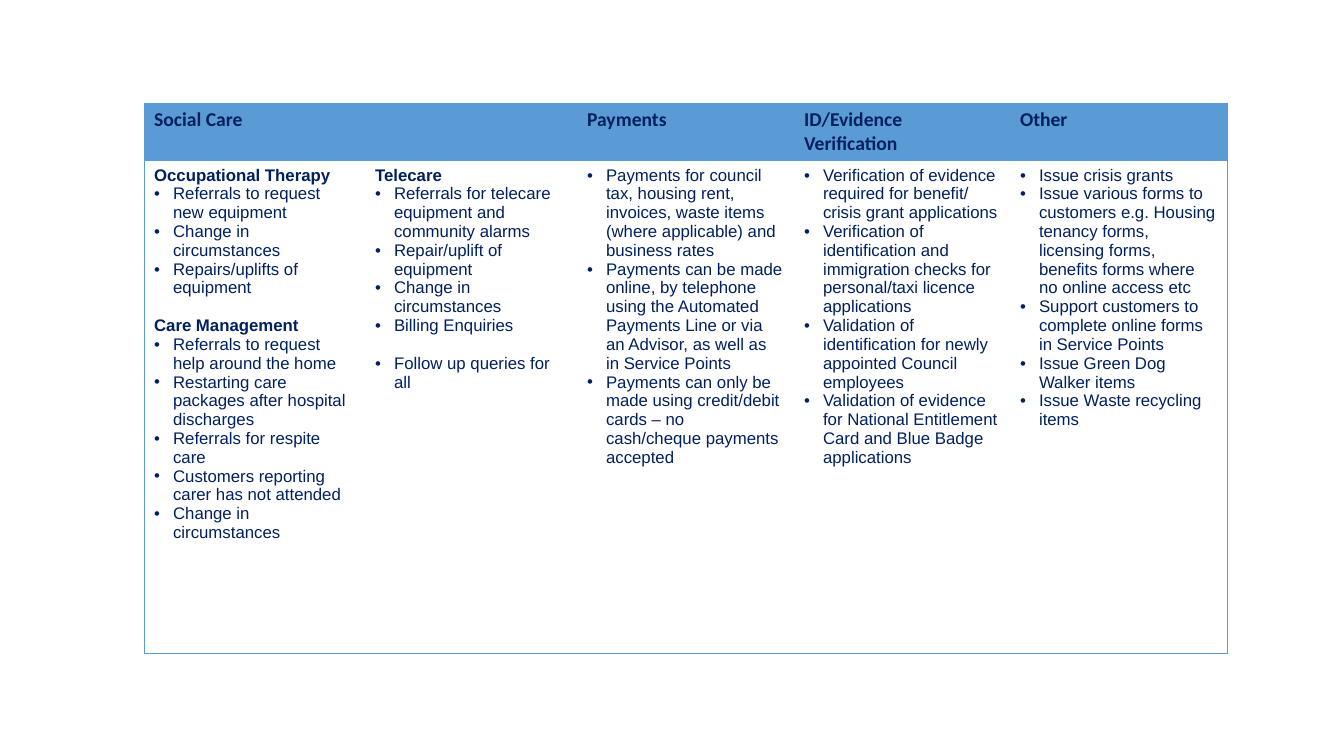
from lxml.etree import SubElement
from pptx import Presentation
from pptx.dml.color import RGBColor
from pptx.oxml.ns import qn
from pptx.util import Pt

HEADERS = ["Social Care", "", "Payments", "ID/Evidence Verification", "Other"]
SERVICES = [
    [
        ("Occupational Therapy", [
            "Referrals to request new equipment",
            "Change in circumstances",
            "Repairs/uplifts of equipment",
        ]),
        ("Care Management", [
            "Referrals to request help around the home",
            "Restarting care packages after hospital discharges",
            "Referrals for respite care",
            "Customers reporting carer has not attended",
            "Change in circumstances",
        ]),
    ],
    [
        ("Telecare", [
            "Referrals for telecare equipment and community alarms",
            "Repair/uplift of equipment",
            "Change in circumstances",
            "Billing Enquiries",
        ]),
        ("", ["Follow up queries for all"]),
    ],
    [("", [
        "Payments for council tax, housing rent, invoices, waste items (where applicable) and business rates",
        "Payments can be made online, by telephone using the Automated Payments Line or via an Advisor, as well as in Service Points",
        "Payments can only be made using credit/debit cards – no cash/cheque payments accepted",
    ])],
    [("", [
        "Verification of evidence required for benefit/ crisis grant applications",
        "Verification of identification and immigration checks for personal/taxi licence applications",
        "Validation of identification for newly appointed Council employees",
        "Validation of evidence for National Entitlement Card and Blue Badge applications",
    ])],
    [("", [
        "Issue crisis grants",
        "Issue various forms to customers e.g. Housing tenancy forms, licensing forms, benefits forms where no online access etc",
        "Support customers to complete online forms in Service Points",
        "Issue Green Dog Walker items",
        "Issue Waste recycling items",
    ])],
]
NAVY, BLUE, WHITE = "002060", "5B9BD5", "FFFFFF"
NO_GRID_STYLE = "{2D5ABB26-0587-4C30-8999-92F81FD0307C}"
LEFT, TOP = 144, 103
COLUMN_WIDTHS = [221, 212, 217, 216, 217]
ROW_HEIGHTS = [50, 493]
BULLET_INDENT = 19
GROUP_GAP = 13.4


def px(length):
    return round(length * 914400 / 100.8)


def color(value):
    return RGBColor.from_string(value)


def write(paragraph, text, size=12, font="Arial", bold=False, bullet=False, gap=0):
    run = paragraph.add_run()
    run.text = text
    run.font.size = Pt(size)
    run.font.name = font
    run.font.bold = bold
    run.font.color.rgb = color(NAVY)
    paragraph.space_before = Pt(gap)
    if bullet:
        properties = paragraph._p.get_or_add_pPr()
        properties.set("marL", str(px(BULLET_INDENT)))
        properties.set("indent", str(-px(BULLET_INDENT)))
        SubElement(properties, qn("a:buFont"), typeface="Arial")
        SubElement(properties, qn("a:buChar"), char="•")


def add_borders(cell, sides):
    properties = cell._tc.get_or_add_tcPr()
    for side in sides:
        line = SubElement(properties, qn(f"a:ln{side}"), w=str(Pt(0.5)))
        fill = SubElement(line, qn("a:solidFill"))
        SubElement(fill, qn("a:srgbClr"), val=BLUE)


def fill_services(cell, groups):
    lines = []
    for number, (heading, items) in enumerate(groups):
        group = [(heading, True)] if heading else []
        group += [(item, False) for item in items]
        for position, (text, is_heading) in enumerate(group):
            gap = GROUP_GAP if number and position == 0 else 0
            lines.append((text, is_heading, gap))
    frame = cell.text_frame
    for index, (text, is_heading, gap) in enumerate(lines):
        paragraph = frame.add_paragraph() if index else frame.paragraphs[0]
        write(paragraph, text, bold=is_heading, bullet=not is_heading, gap=gap)


def main():
    presentation = Presentation()
    presentation.slide_width = px(1344)
    presentation.slide_height = px(756)
    slide = presentation.slides.add_slide(presentation.slide_layouts[6])
    table = slide.shapes.add_table(
        len(ROW_HEIGHTS), len(COLUMN_WIDTHS), px(LEFT), px(TOP),
        px(sum(COLUMN_WIDTHS)), px(sum(ROW_HEIGHTS))).table
    table._tbl.tblPr.find(qn("a:tableStyleId")).text = NO_GRID_STYLE
    table.horz_banding = False
    for row, height in zip(table.rows, ROW_HEIGHTS):
        row.height = px(height)
    last = len(COLUMN_WIDTHS) - 1
    for index, width in enumerate(COLUMN_WIDTHS):
        table.columns[index].width = px(width)
        header, body = table.cell(0, index), table.cell(1, index)
        edges = ("L" if index == 0 else "") + ("R" if index == last else "")
        for cell, side, background in ((header, "T", BLUE), (body, "B", WHITE)):
            add_borders(cell, edges + side)
            cell.fill.solid()
            cell.fill.fore_color.rgb = color(background)
        if HEADERS[index]:
            write(header.text_frame.paragraphs[0], HEADERS[index],
                  size=14, font="Calibri", bold=True)
        fill_services(body, SERVICES[index])
    table.cell(0, 0).merge(table.cell(0, 1))
    presentation.save("out.pptx")


if __name__ == "__main__":
    main()
